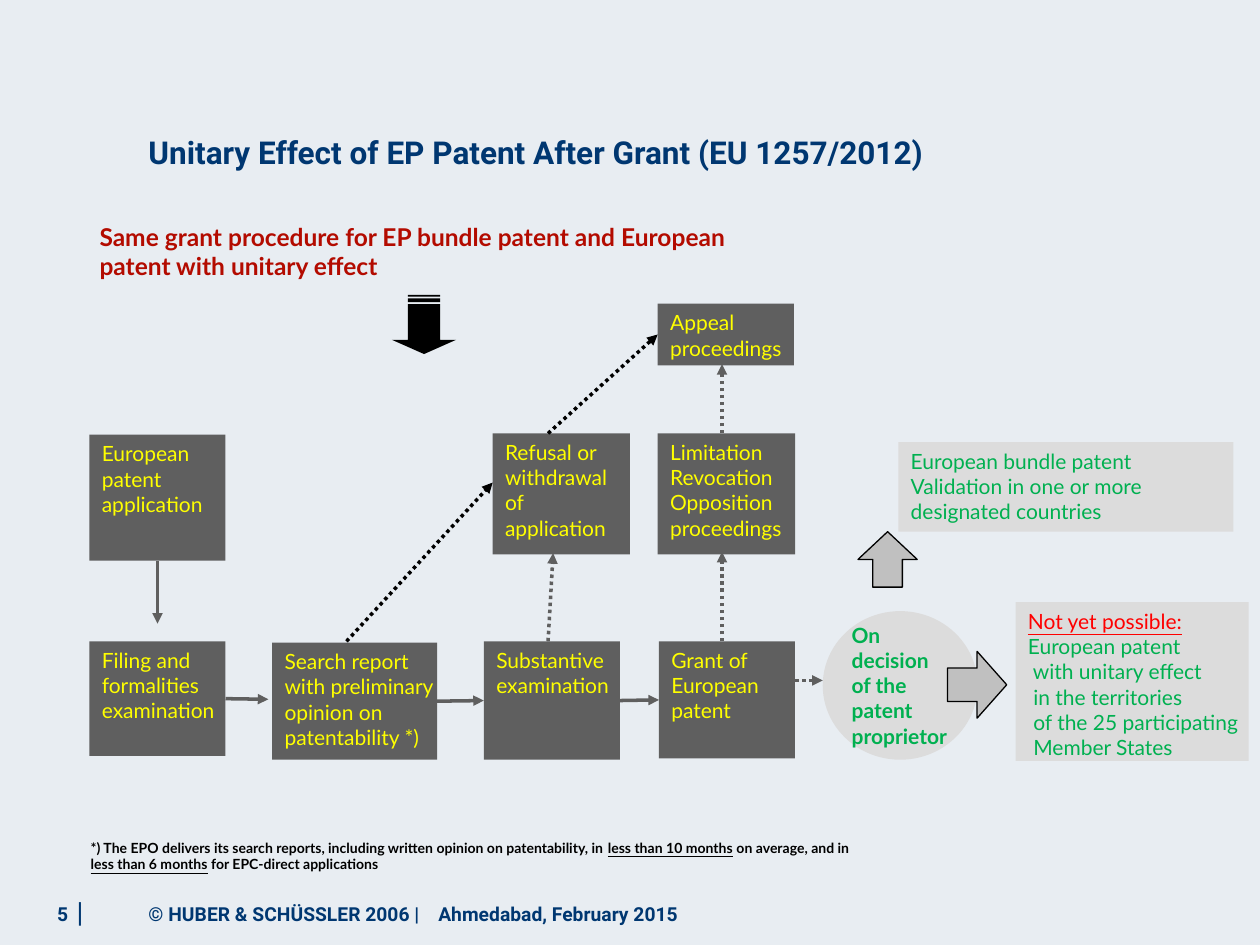
from lxml import etree
from pptx import Presentation
from pptx.dml.color import RGBColor
from pptx.enum.dml import MSO_LINE
from pptx.enum.shapes import MSO_CONNECTOR, MSO_SHAPE
from pptx.enum.text import MSO_ANCHOR, PP_ALIGN
from pptx.oxml.ns import qn
from pptx.util import Inches, Pt

RECTANGLE = MSO_SHAPE.RECTANGLE
OVAL = MSO_SHAPE.OVAL
UP_ARROW = MSO_SHAPE.UP_ARROW
RIGHT_ARROW = MSO_SHAPE.RIGHT_ARROW
STRIPED_ARROW = MSO_SHAPE.STRIPED_RIGHT_ARROW
STRAIGHT = MSO_CONNECTOR.STRAIGHT
DOTTED = MSO_LINE.ROUND_DOT
TOP, MIDDLE, BOTTOM = MSO_ANCHOR.TOP, MSO_ANCHOR.MIDDLE, MSO_ANCHOR.BOTTOM
LEFT, RIGHT = PP_ALIGN.LEFT, PP_ALIGN.RIGHT

COLORS = {
    "background": "E8EDF2",
    "navy": "003771",
    "step": "5F5F5F",
    "yellow": "FFFF00",
    "panel": "DCDCDC",
    "green": "00B050",
    "red": "FF0000",
    "crimson": "B30B00",
    "silver": "C0C0C0",
    "black": "000000",
}
NORMAL_INSETS = (0.1, 0.05, 0.1, 0.05)
TIGHT_INSETS = (0.05, 0, 0, 0)


def color(name):
    return RGBColor.from_string(COLORS[name])


def write_text(shape, lines, size=12, font="Lato", ink="yellow", bold=False,
               align=LEFT, anchor=TOP, insets=NORMAL_INSETS, wrap=False, spacing=None):
    frame = shape.text_frame
    frame.word_wrap = wrap
    frame.vertical_anchor = anchor
    frame.margin_left, frame.margin_top, frame.margin_right, frame.margin_bottom = map(Inches, insets)
    for index, line in enumerate(lines):
        para = frame.paragraphs[0] if index == 0 else frame.add_paragraph()
        para.alignment = align
        if spacing:
            para.line_spacing = spacing
        for part in [line] if isinstance(line, str) else line:
            text, changes = (part, {}) if isinstance(part, str) else part
            for position, piece in enumerate(text.split("\n")):
                if position:
                    para.add_line_break()
                span = para.add_run()
                span.text = piece
                span.font.name = font
                span.font.size = Pt(size)
                span.font.bold = bold
                span.font.underline = changes.get("underline", False)
                span.font.color.rgb = color(changes.get("ink", ink))


class SlideBuilder:
    def __init__(self, deck):
        self.page = deck.slides.add_slide(deck.slide_layouts[6])
        fill = self.page.background.fill
        fill.solid()
        fill.fore_color.rgb = color("background")

    def text(self, place, lines, **style):
        box = self.page.shapes.add_textbox(*map(Inches, place))
        write_text(box, lines, **{"wrap": True, **style})
        return box

    def shape(self, kind, place, fill, outline=None):
        shape = self.page.shapes.add_shape(kind, *map(Inches, place))
        shape.shadow.inherit = False
        shape.fill.solid()
        shape.fill.fore_color.rgb = color(fill)
        if outline:
            shape.line.color.rgb = color(outline)
            shape.line.width = Pt(0.75)
        else:
            shape.line.fill.background()
        return shape

    def box(self, place, lines, fill="step", kind=RECTANGLE, **style):
        box = self.shape(kind, place, fill)
        write_text(box, lines, **style)
        return box

    def arrow(self, start, end, ink="step", dotted=False, source=None, target=None):
        arrow = self.page.shapes.add_connector(STRAIGHT, *map(Inches, (*start, *end)))
        if source:
            arrow.begin_connect(*source)
        if target:
            arrow.end_connect(*target)
        arrow.line.color.rgb = color(ink)
        arrow.line.width = Pt(2)
        if dotted:
            arrow.line.dash_style = DOTTED
        etree.SubElement(arrow.line._get_or_add_ln(), qn("a:tailEnd"), type="triangle")
        etree.SubElement(arrow._element.spPr, qn("a:effectLst"))
        return arrow


def main():
    deck = Presentation()
    deck.slide_width, deck.slide_height = Inches(10), Inches(7.5)
    slide = SlideBuilder(deck)

    heading = {"font": "Roboto", "ink": "navy", "bold": True}
    slide.text((1.08, 1.04, 8.75, 0.62), ["Unitary Effect of EP Patent After Grant (EU 1257/2012)"],
               size=18, spacing=0.9, **heading)
    slide.text((0.74, 1.76, 5.5, 0.47),
               ["Same grant procedure for EP bundle patent and European patent with unitary effect"],
               size=14, ink="crimson", bold=True, insets=TIGHT_INSETS)

    application = slide.box((0.71, 3.45, 1.08, 1), ["European", "patent", "application"])
    filing = slide.box((0.71, 5.09, 1.08, 0.91), ["Filing and", "formalities", "examination"])
    search = slide.box((2.16, 5.1, 1.31, 0.93),
                       ["Search report", "with preliminary", "opinion on", "patentability *)"])
    substantive = slide.box((3.84, 5.09, 1.08, 0.94), ["Substantive", "examination"])
    grant = slide.box((5.23, 5.09, 1.08, 0.93), ["Grant of", "European", "patent"])
    slide.box((3.91, 3.44, 1.09, 0.96), ["Refusal or", "withdrawal", "of \napplication"])
    slide.box((5.22, 3.44, 1.09, 0.96), ["Limitation", "Revocation", "Opposition", "proceedings"])
    appeal = slide.box((5.22, 2.41, 1.08, 0.49), ["Appeal", "proceedings"])

    slide.box((7.13, 3.51, 2.66, 0.71),
              ["European bundle patent", "Validation in one or more", "designated countries"],
              fill="panel", ink="green", wrap=True)
    slide.box((8.06, 4.78, 1.85, 1.26),
              [[("Not yet possible:", {"ink": "red", "underline": True})], "European patent",
               " with unitary effect", " in the territories", " of the 25 participating",
               " Member States"],
              fill="panel", ink="green")
    slide.box((6.53, 4.85, 1.23, 1.18), ["On", "decision", "of the", "patent", "proprietor"],
              fill="panel", kind=OVAL, ink="green", bold=True, anchor=MIDDLE, insets=TIGHT_INSETS)

    slide.arrow((1.25, 4.45), (1.25, 4.95), source=(application, 2))
    slide.arrow((1.8, 5.55), (2.13, 5.55), source=(filing, 3))
    slide.arrow((3.47, 5.55), (3.84, 5.55), source=(search, 3), target=(substantive, 1))
    slide.arrow((4.92, 5.55), (5.23, 5.55), source=(substantive, 3), target=(grant, 1))
    for start, end in [((4.35, 5.09), (4.39, 4.39)), ((5.73, 5.09), (5.73, 4.38)),
                       ((5.73, 3.44), (5.73, 2.89)), ((6.31, 5.4), (6.53, 5.4))]:
        slide.arrow(start, end, dotted=True)
    slide.arrow((2.75, 5.09), (3.91, 3.83), ink="black", dotted=True)
    slide.arrow((4.35, 3.44), (5.22, 2.65), ink="black", dotted=True, target=(appeal, 1))

    down_arrow = slide.shape(STRIPED_ARROW, (3.13, 2.32, 0.47, 0.51), "black")
    down_arrow.rotation = 90
    down_arrow.adjustments[0] = 0.5
    down_arrow.adjustments[1] = 0.24
    slide.shape(UP_ARROW, (6.81, 4.22, 0.47, 0.44), "silver", outline="black")
    slide.shape(RIGHT_ARROW, (7.52, 5.17, 0.47, 0.53), "silver", outline="black")

    underlined = {"underline": True}
    slide.text((0.67, 6.66, 9.2, 0.27),
               [["*) The EPO delivers its search reports, including written opinion on patentability, in ",
                 ("less than 10 months", underlined), " on average, and in"],
                [("less than 6 months", underlined), " for EPC-direct applications"]],
               size=8, ink="black", bold=True, insets=TIGHT_INSETS)

    slide.text((0.17, 7.11, 0.47, 0.28), ["5"], size=11, align=RIGHT, anchor=BOTTOM, **heading)
    slide.text((0.51, 7.05, 0.33, 0.37), ["|"], size=16, font="Roboto", ink="navy")
    slide.text((1.08, 7.11, 2.51, 0.28), ["© HUBER & SCHÜSSLER 2006 |"], size=11, **heading)
    slide.text((3.38, 7.11, 6.08, 0.28), ["Ahmedabad, February 2015"], size=11, **heading)

    deck.save("out.pptx")


if __name__ == "__main__":
    main()
